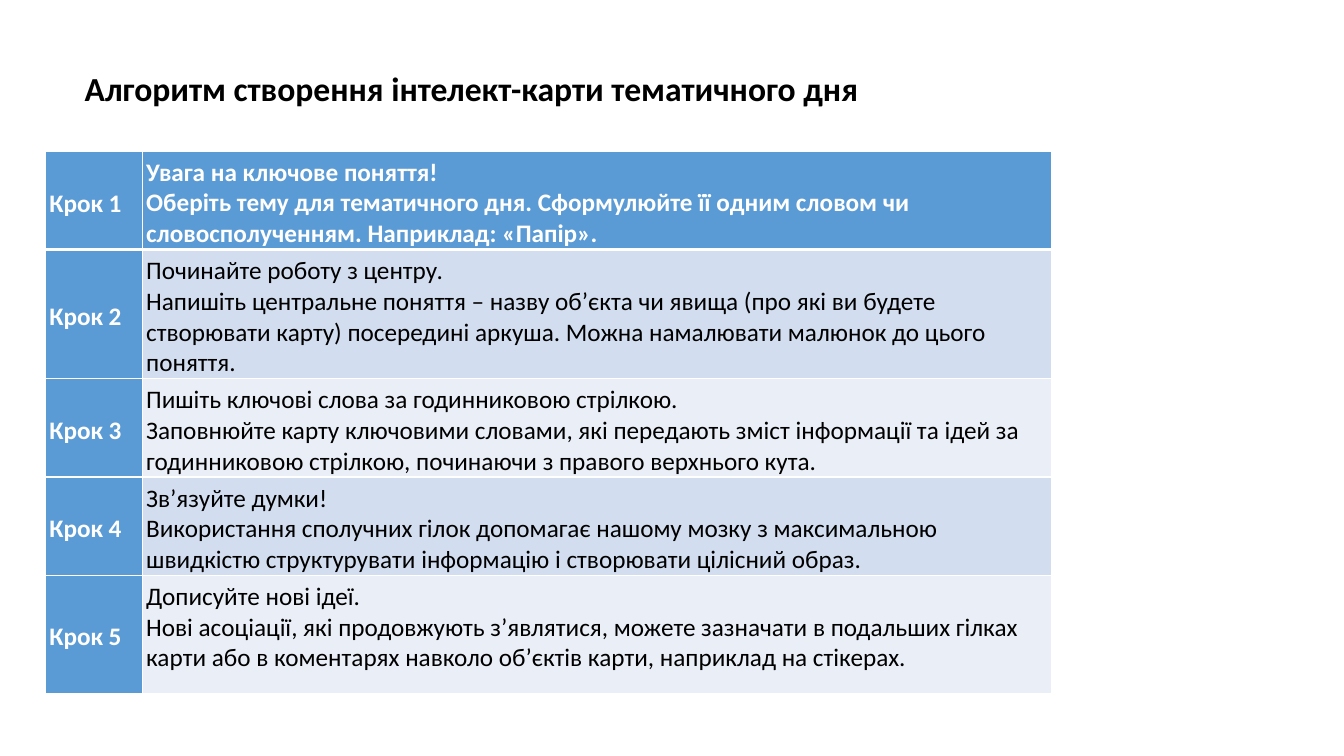
import lxml.etree
import pptx
import pptx.dml.color
import pptx.enum.text
import pptx.oxml.ns
import pptx.util

Inches = pptx.util.Inches
Pt = pptx.util.Pt
ANCHOR = pptx.enum.text.MSO_ANCHOR

COLORS = {
    "text": "000000",
    "light": "FFFFFF",
    "accent": "5B9BD5",
    "band_dark": "D2DEEF",
    "band_pale": "EAEFF7",
}
HEADING = "Алгоритм створення інтелект-карти тематичного дня"
STEPS = [
    ("Увага на ключове поняття!",
     "Оберіть тему для тематичного дня. Сформулюйте її одним словом чи "
     "словосполученням. Наприклад: «Папір»."),
    ("Починайте роботу з центру.",
     "Напишіть центральне поняття – назву об’єкта чи явища (про які ви будете "
     "створювати карту) посередині аркуша. Можна намалювати малюнок до цього поняття."),
    ("Пишіть ключові слова за годинниковою стрілкою.",
     "Заповнюйте карту ключовими словами, які передають зміст інформації та ідей за "
     "годинниковою стрілкою, починаючи з правого верхнього кута."),
    ("Зв’язуйте думки!",
     "Використання сполучних гілок допомагає нашому мозку з максимальною "
     "швидкістю структурувати інформацію і створювати цілісний образ."),
    ("Дописуйте нові ідеї.",
     "Нові асоціації, які продовжують з’являтися, можете зазначати в подальших гілках "
     "карти або в коментарях навколо об’єктів карти, наприклад на стікерах."),
]
COLUMN_WIDTHS = [0.96, 9.02]
ROW_HEIGHTS = [0.92, 1.17, 0.92, 0.92, 1.17]


def rgb(color):
    return pptx.dml.color.RGBColor.from_string(COLORS[color])


def write_text(frame, text, size=18, color="text", bold=False, line_spacing=None):
    """Fill a text frame, one paragraph per line of text."""
    frame.text = text
    for paragraph in frame.paragraphs:
        paragraph.alignment = pptx.enum.text.PP_ALIGN.LEFT
        if line_spacing:
            paragraph.line_spacing = line_spacing
        font = paragraph.runs[0].font
        font.name = "Calibri"
        font.size = Pt(size)
        font.bold = bold
        font.color.rgb = rgb(color)


def add_borders(cell, **widths):
    """Draw white borders; widths in points are keyed L, R, T and B."""
    qn = pptx.oxml.ns.qn
    properties = cell._tc.get_or_add_tcPr()
    for side, width in widths.items():
        line = lxml.etree.SubElement(properties, qn(f"a:ln{side}"), w=str(Pt(width)))
        fill = lxml.etree.SubElement(line, qn("a:solidFill"))
        lxml.etree.SubElement(fill, qn("a:srgbClr"), val=COLORS["light"])


def fill_cell(cell, text, row, background, anchor, **text_format):
    cell.margin_left, cell.margin_top = Inches(0.04), Inches(0.06)
    cell.margin_right, cell.margin_bottom = Inches(0.01), Inches(0)
    cell.vertical_anchor = anchor
    add_borders(cell, L=1, R=1, T=3 if row == 1 else 1, B=3 if row == 0 else 1)
    cell.fill.solid()
    cell.fill.fore_color.rgb = rgb(background)
    write_text(cell.text_frame, text, **text_format)


def add_heading(slide):
    heading = slide.shapes.title
    heading.left, heading.top = Inches(0.74), Inches(0.67)
    heading.width, heading.height = Inches(9.4), Inches(0.83)
    frame = heading.text_frame
    frame.auto_size = pptx.enum.text.MSO_AUTO_SIZE.NONE
    frame.vertical_anchor = ANCHOR.MIDDLE
    frame.margin_bottom = Inches(0.42)
    write_text(frame, HEADING, size=24, bold=True, line_spacing=0.9)


def add_steps(slide):
    steps = slide.shapes.add_table(
        len(STEPS), len(COLUMN_WIDTHS), Inches(0.45), Inches(1.5),
        Inches(sum(COLUMN_WIDTHS)), Inches(sum(ROW_HEIGHTS))).table
    for column, width in zip(steps.columns, COLUMN_WIDTHS):
        column.width = Inches(width)
    for row, (advice, height) in enumerate(zip(STEPS, ROW_HEIGHTS)):
        steps.rows[row].height = Inches(height)
        first = row == 0
        band = "band_dark" if row % 2 else "band_pale"
        fill_cell(steps.cell(row, 0), f"Крок {row + 1}", row, "accent",
                  ANCHOR.MIDDLE, color="light", bold=True)
        fill_cell(steps.cell(row, 1), "\n".join(advice), row,
                  "accent" if first else band, ANCHOR.TOP,
                  color="light" if first else "text", bold=first)


def main():
    deck = pptx.Presentation()
    deck.slide_width, deck.slide_height = Inches(13.33), Inches(7.5)
    slide = deck.slides.add_slide(deck.slide_layouts[5])
    add_heading(slide)
    add_steps(slide)
    deck.save("out.pptx")


if __name__ == "__main__":
    main()
